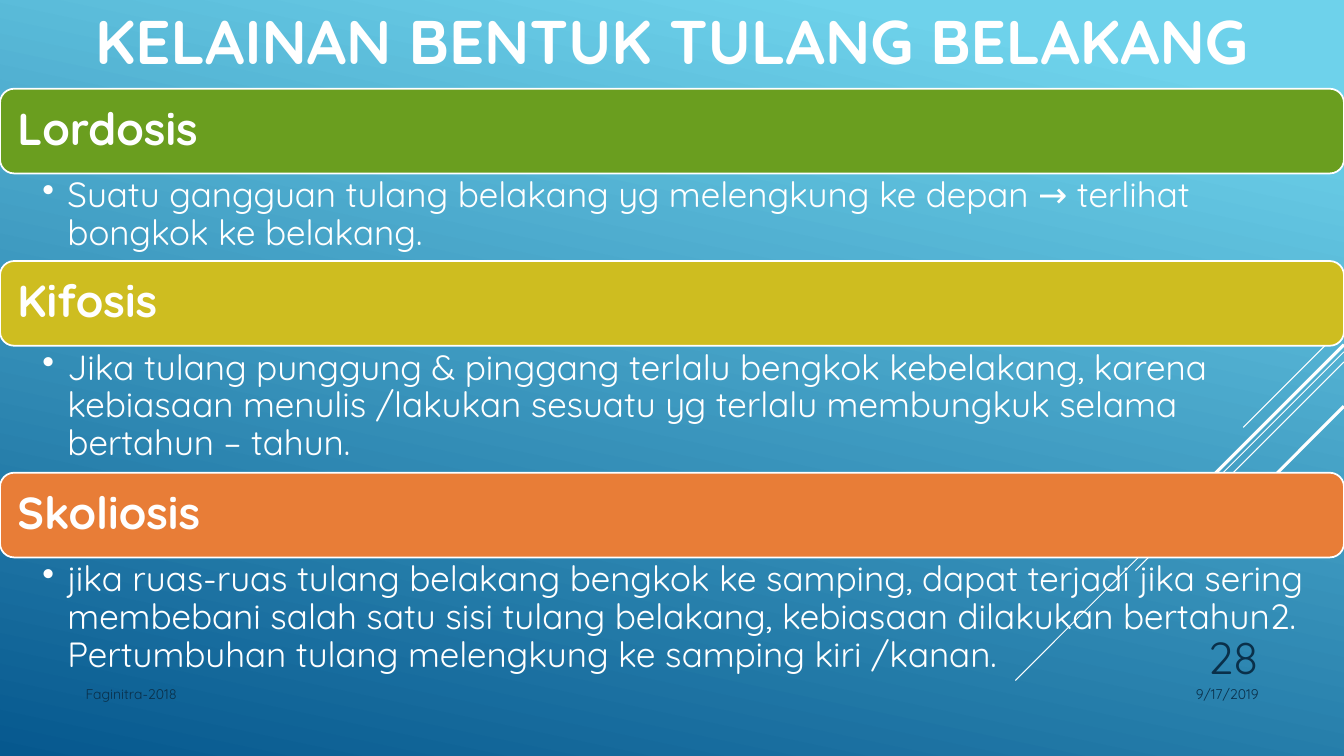
from lxml import etree
from pptx import Presentation
from pptx.dml.color import RGBColor
from pptx.enum.shapes import MSO_CONNECTOR, MSO_SHAPE
from pptx.enum.text import MSO_ANCHOR as Anchor, PP_ALIGN as Align
from pptx.oxml.ns import qn
from pptx.util import Pt

WIDTH, HEIGHT = 960, 540
FONT = "Quicksand"
WHITE = RGBColor(0xFF, 0xFF, 0xFF)
SKY = RGBColor(0x6E, 0xD2, 0xEB)
DEEP_BLUE = RGBColor(0x06, 0x58, 0x8E)
NAVY = RGBColor(0x0A, 0x30, 0x4A)
GREEN = RGBColor(0x6A, 0x9E, 0x1F)
YELLOW = RGBColor(0xCE, 0xBD, 0x20)
ORANGE = RGBColor(0xE8, 0x7D, 0x37)

BAR_HEIGHT = 60.5
# heading, bar colour, height of the description, description
DISORDERS = [
    ("Lordosis", GREEN, 62.6,
     "Suatu gangguan tulang belakang yg melengkung ke depan → terlihat "
     "bongkok ke belakang."),
    ("Kifosis", YELLOW, 90.7,
     "Jika tulang punggung & pinggang terlalu bengkok kebelakang, karena "
     "kebiasaan menulis /lakukan sesuatu yg terlalu membungkuk selama "
     "bertahun – tahun."),
    ("Skoliosis", ORANGE, 117.4,
     "jika ruas-ruas tulang belakang bengkok ke samping, dapat terjadi jika "
     "sering membebani salah satu sisi tulang belakang, kebiasaan dilakukan "
     "bertahun2. Pertumbuhan tulang melengkung ke samping kiri /kanan."),
]
# start height at the right edge, run to the lower left, line width
DIAGONALS = [(233.3, 72, 0.75), (251.3, 234.7, 0.75), (258.5, 149, 0.75),
             (246.2, 137.5, 2.25), (290.2, 100, 2.25)]


def apply(target, formats):
    for name, value in formats.items():
        setattr(target, name, value)


def write(shape, text, size, color=WHITE, bold=False, align=Align.LEFT,
          anchor=Anchor.TOP, insets=(7.2, 3.6, 7.2, 3.6), spacing=1.0,
          bullet_indent=0):
    """Fill a shape with one formatted paragraph; insets are left, top, right, bottom."""
    frame = shape.text_frame
    sides = ("margin_left", "margin_top", "margin_right", "margin_bottom")
    apply(frame, dict(zip(sides, map(Pt, insets))))
    apply(frame, {"word_wrap": True, "vertical_anchor": anchor})
    paragraph = frame.paragraphs[0]
    apply(paragraph, {"text": text, "alignment": align, "line_spacing": spacing})
    if bullet_indent:
        properties = paragraph._p.get_or_add_pPr()
        properties.set("marL", str(Pt(bullet_indent)))
        properties.set("indent", str(-Pt(bullet_indent)))
        etree.SubElement(properties, qn("a:buChar")).set("char", "•")
    font = paragraph.runs[0].font
    apply(font, {"name": FONT, "size": Pt(size), "bold": bold})
    font.color.rgb = color


def add_text(slide, box, text, size, **formats):
    write(slide.shapes.add_textbox(*map(Pt, box)), text, size, **formats)


def paint_background(slide):
    fill = slide.background.fill
    fill.gradient()
    fill.gradient_angle = 258
    for stop, position, color in zip(fill.gradient_stops, (0.1, 1), (SKY, DEEP_BLUE)):
        stop.position = position
        stop.color.rgb = color


def add_diagonals(slide, right):
    for top, run, width in DIAGONALS:
        ends = map(Pt, (right, top, right - run, top + run))
        line = slide.shapes.add_connector(MSO_CONNECTOR.STRAIGHT, *ends)
        line.line.width = Pt(width)
        line.line.color.rgb = WHITE
        etree.SubElement(line._element.spPr, qn("a:effectLst"))


def add_disorder(slide, box, heading, color, description):
    left, top, width, height = box
    bar = slide.shapes.add_shape(MSO_SHAPE.ROUNDED_RECTANGLE,
                                 *map(Pt, (left, top, width, BAR_HEIGHT)))
    bar.shadow.inherit = False
    bar.fill.solid()
    bar.fill.fore_color.rgb = color
    bar.line.color.rgb = WHITE
    bar.line.width = Pt(1.25)
    write(bar, heading, 32, bold=True, anchor=Anchor.MIDDLE,
          insets=(9.4, 9.4, 9.4, 9.4), spacing=0.9)
    add_text(slide, (left, top + BAR_HEIGHT, width, height - BAR_HEIGHT),
             description, 25, insets=(30.2, 2.9, 18, 2.9), spacing=0.9,
             bullet_indent=18)


def add_disorders(slide, left, top, width):
    for heading, color, text_height, description in DISORDERS:
        height = BAR_HEIGHT + text_height
        add_disorder(slide, (left, top, width, height), heading, color, description)
        top += height


def add_footer(slide, left, top, right):
    add_text(slide, (right - 126, top, 126, 28.8), "9/17/2019", 10,
             color=NAVY, align=Align.RIGHT)
    add_text(slide, (left, top, 594, 28.8), "Faginitra-2018", 10, color=NAVY)
    add_text(slide, (right - 90, top - 46.8, 90, 52.6), "28", 32,
             color=NAVY, align=Align.RIGHT, anchor=Anchor.BOTTOM)


def main():
    presentation = Presentation()
    apply(presentation, {"slide_width": Pt(WIDTH), "slide_height": Pt(HEIGHT)})
    slide = presentation.slides.add_slide(presentation.slide_layouts[6])
    paint_background(slide)
    add_diagonals(slide, WIDTH)
    add_text(slide, (0, 0, WIDTH, 56.9), "KELAINAN BENTUK TULANG BELAKANG", 44,
             bold=True, align=Align.CENTER, anchor=Anchor.MIDDLE)
    add_disorders(slide, 0, 63.4, WIDTH)
    add_footer(slide, 54, 486, 906)
    presentation.save("out.pptx")


if __name__ == "__main__":
    main()
